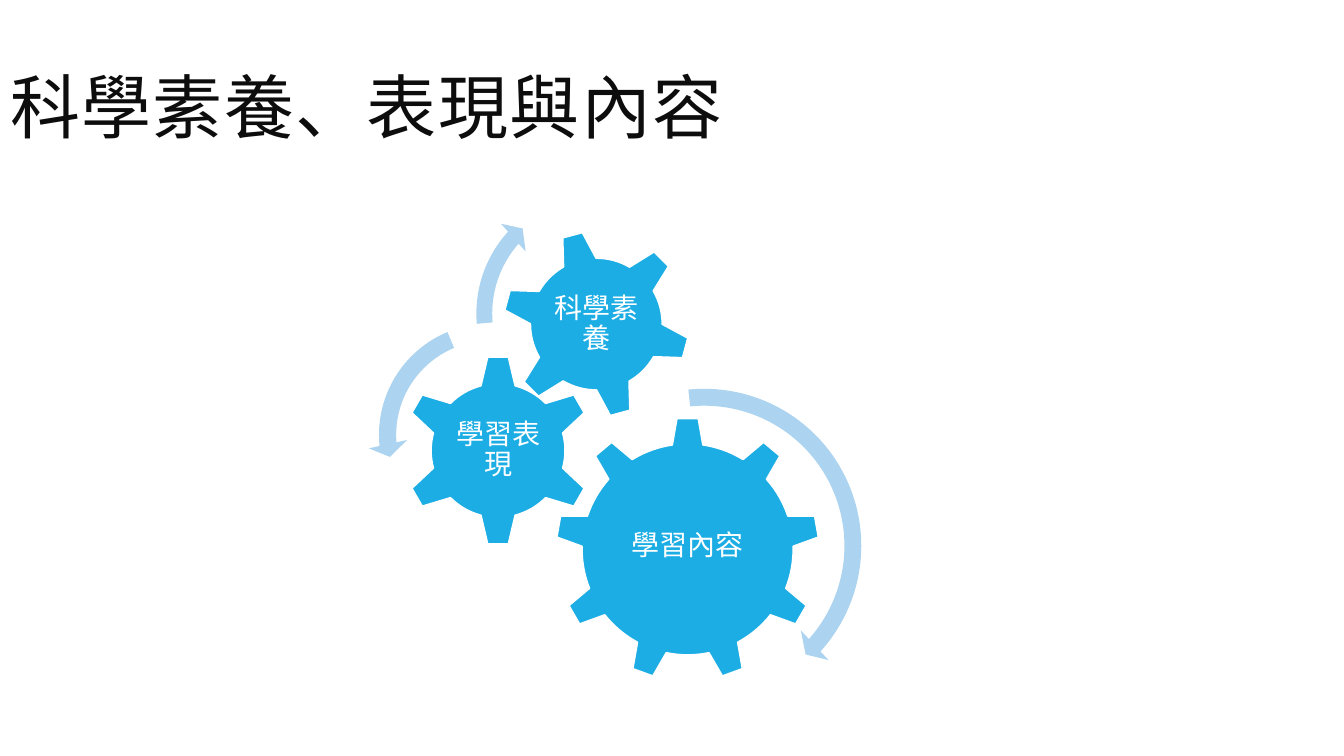
from dataclasses import dataclass

import pptx
import pptx.dml.color
import pptx.enum.shapes
import pptx.enum.text
import pptx.util

Inches = pptx.util.Inches
Pt = pptx.util.Pt
MSO_SHAPE = pptx.enum.shapes.MSO_SHAPE
MSO_ANCHOR = pptx.enum.text.MSO_ANCHOR
PP_ALIGN = pptx.enum.text.PP_ALIGN


@dataclass(frozen=True)
class Theme:
    gear: str = "1CADE4"
    arrow: str = "ACD3EF"
    white: str = "FFFFFF"
    title_color: str = "0D0D0D"
    title_font: str = "Cabin"
    label_font: str = "Calibri"
    title_size: int = 50
    label_size: int = 20
    outline: float = 1.25


THEME = Theme()

# gear shape, (left, top, size), rotation, label, label box
GEARS = [
    (MSO_SHAPE.GEAR_9, (5.51, 4.14, 2.62), 0, "學習內容", (6.04, 4.75, 1.56, 1.35)),
    (MSO_SHAPE.GEAR_6, (3.99, 3.52, 1.9), 0, "學習表現", (4.47, 4, 0.95, 0.94)),
    (MSO_SHAPE.GEAR_6, (4.98, 2.28, 1.87), 345, "科學素養", (5.39, 2.69, 1.05, 1.05)),
]

# arrow shape, (left, top, size), adjustments
ARROWS = [
    (MSO_SHAPE.CIRCULAR_ARROW, (5.31, 3.74, 3.35), (0.05, 2.99, 25.2, 158.53, 0.06)),
    (MSO_SHAPE.LEFT_CIRCULAR_ARROW, (3.65, 3.1, 2.43), (0.07, 4.3, 104.89, 148.38, 0.08)),
    (MSO_SHAPE.CIRCULAR_ARROW, (4.62, 1.8, 2.62), (0.06, 3.94, 133.14, 105.08, 0.07)),
]


def rgb(value):
    return pptx.dml.color.RGBColor.from_string(value)


def style_paragraph(p, font, size, color, line_spacing):
    p.font.name = font
    p.font.size = Pt(size)
    p.font.color.rgb = rgb(color)
    p.line_spacing = line_spacing


def set_title(s, text):
    sp = s.shapes.title
    sp.left, sp.top = Inches(0), Inches(0.4)
    sp.width, sp.height = Inches(11.5), Inches(1.45)
    tf = sp.text_frame
    tf.text = text
    tf.vertical_anchor = MSO_ANCHOR.MIDDLE
    p = tf.paragraphs[0]
    p.alignment = PP_ALIGN.LEFT
    style_paragraph(p, THEME.title_font, THEME.title_size, THEME.title_color, 0.8)
    p.runs[0]._r.get_or_add_rPr().set("spc", "100")


def add_square_shape(shapes, kind, place, color):
    """Add a filled preset shape whose width equals its height."""
    left, top, size = map(Inches, place)
    sp = shapes.add_shape(kind, left, top, size, size)
    sp.shadow.inherit = False
    sp.fill.solid()
    sp.fill.fore_color.rgb = rgb(color)
    return sp


def add_label(shapes, text, box):
    tf = shapes.add_textbox(*map(Inches, box)).text_frame
    tf.word_wrap = True
    tf.vertical_anchor = MSO_ANCHOR.MIDDLE
    tf.margin_left = tf.margin_right = Inches(0.03)
    tf.margin_top = tf.margin_bottom = Inches(0.03)
    tf.text = text
    p = tf.paragraphs[0]
    p.alignment = PP_ALIGN.CENTER
    style_paragraph(p, THEME.label_font, THEME.label_size, THEME.white, 0.9)


def add_gear(shapes, kind, place, rotation, label, label_box):
    sp = add_square_shape(shapes, kind, place, THEME.gear)
    sp.rotation = rotation
    sp.line.color.rgb = rgb(THEME.white)
    sp.line.width = Pt(THEME.outline)
    add_label(shapes, label, label_box)


def add_arrow(shapes, kind, place, adjustments):
    sp = add_square_shape(shapes, kind, place, THEME.arrow)
    sp.line.fill.background()
    for i, value in enumerate(adjustments):
        sp.adjustments[i] = value


def main():
    prs = pptx.Presentation()
    prs.slide_width, prs.slide_height = Inches(13.33), Inches(7.5)
    s = prs.slides.add_slide(prs.slide_layouts[5])
    set_title(s, "科學素養、表現與內容")
    group = s.shapes.add_group_shape()
    for gear in GEARS:
        add_gear(group.shapes, *gear)
    for arrow in ARROWS:
        add_arrow(group.shapes, *arrow)
    prs.save("out.pptx")


if __name__ == "__main__":
    main()
